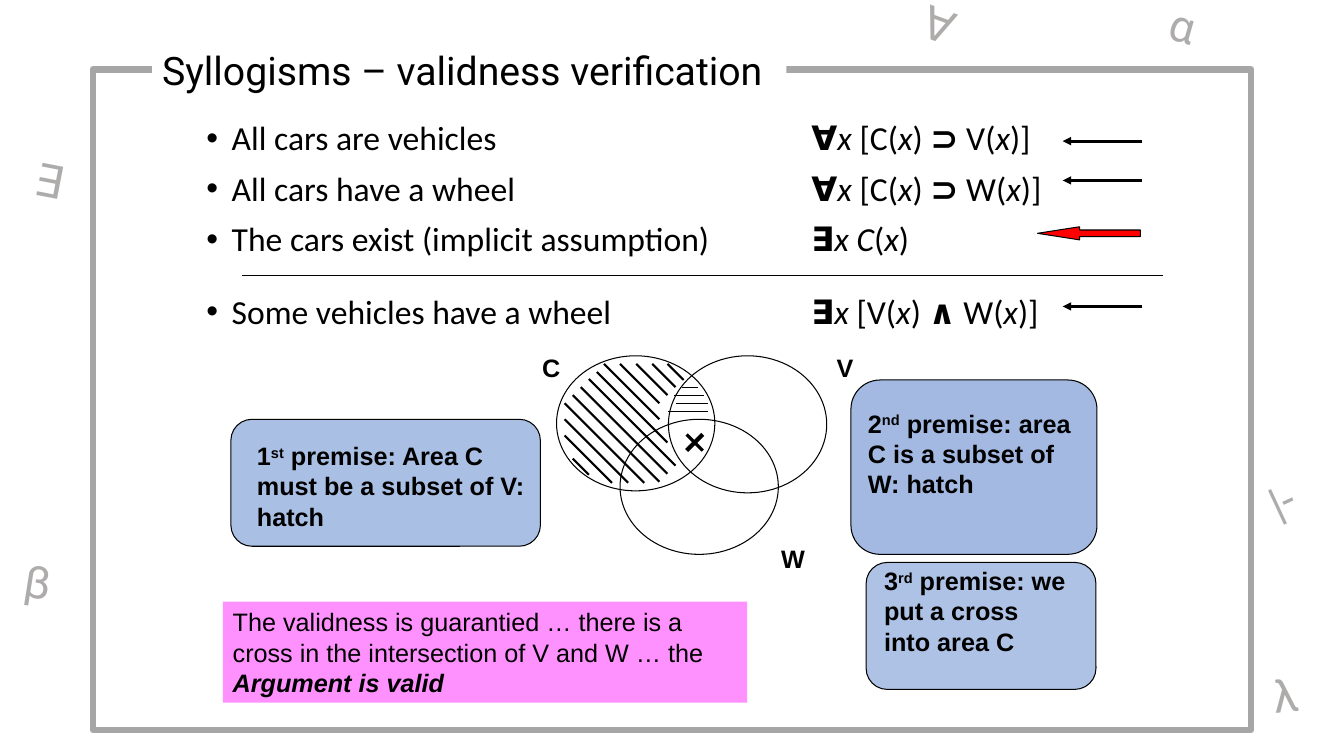
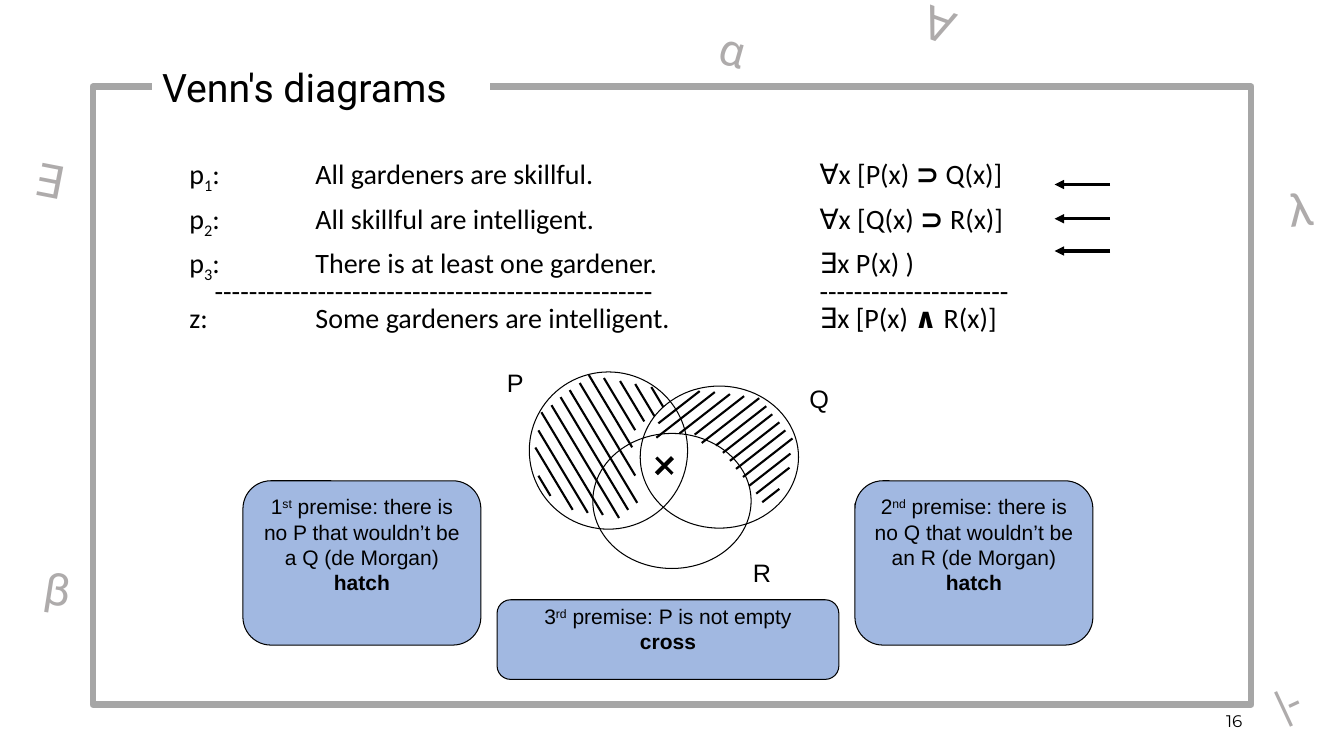
from lxml import etree
from pptx import Presentation
from pptx.dml.color import RGBColor
from pptx.enum.shapes import MSO_CONNECTOR as Connector, MSO_SHAPE as Shape
from pptx.enum.text import MSO_ANCHOR as Anchor, PP_ALIGN as Align
from pptx.oxml.ns import qn
from pptx.util import Inches, Pt

BLACK, WHITE, BLUE, PINK, RED = "000000", "FFFFFF", "4472C4", "FF00FF", "FF0000"
FRAME_GREY, SYMBOL_GREY = "A6A6A6", "AEABAB"
# Inline marks used in the texts: *bold*  _italic_  ^superscript^  ~subscript~
MARKS = "*_^~"

# Floating symbols: position, size, rotation (a slide may move some of them)
SYMBOLS = {
    "∀": (9.06, -0.06, 0.6, 20),
    "∃": (0.25, 1.48, 0.63, 11),
    "α": (11.51, -0.04, 0.63, 16),
    "β": (0.15, 5.46, 0.58, 9),
    "λ": (12.53, 6.57, 0.59, -6),
    "|-": (12.49, 4.59, 0.68, -25),
}

# Slide 1 content
SYLLOGISM = [
    ("All cars are vehicles", "*∀*_x_ [C(_x_) *⊃* V(_x_)]"),
    ("All cars have a wheel", "*∀*_x_ [C(_x_) *⊃* W(_x_)]"),
    ("The cars exist (implicit assumption)", "*∃*_x C_(_x_)"),
    ("Some vehicles have a wheel", "*∃*_x_ [V(_x_) *∧* W(_x_)]"),
]
SYLLOGISM_GAPS = [10, 10, 10, 26]
# Box, opacity, text, text area
PREMISES = [
    ((2.29, 4.16, 3.07, 1.26), 45,
     "*1^st^ premise: Area C must be a subset of V: hatch*", (2.45, 4.32, 2.99, 1)),
    ((8.44, 3.77, 2.44, 1.73), 49,
     "*2^nd^ premise: area C is a subset of W: hatch*", (8.51, 4, 2.28, 1)),
    ((8.59, 5.58, 2.28, 1.26), 43,
     "*3^rd^ premise: we put a cross into area C*", (8.67, 5.56, 2.05, 1)),
]
VERDICT = ("The validness is guarantied … there is a cross in the intersection "
           "of V and W … the\v*_Argument is valid_*")
CAR_SETS = [
    ("*C*", (5.28, 3.45), (5.52, 3.53, 1.57, 1.34)),
    ("*V*", (8.2, 3.45), (6.63, 3.53, 1.57, 1.36)),
    ("*W*", (7.65, 5.34), (6.15, 4.16, 1.57, 1.34)),
]
# Hatch strokes: start x, start y, horizontal run
CARS_OUTSIDE_V = [
    (6.62, 3.61, 0.16), (6.47, 3.61, 0.23), (6.31, 3.61, 0.31), (6.15, 3.61, 0.39),
    (5.99, 3.61, 0.55), (5.92, 3.69, 0.7), (5.84, 3.76, 0.86), (5.76, 3.84, 0.86),
    (5.68, 3.92, 0.86), (5.6, 4, 0.79), (5.6, 4.16, 0.63), (5.6, 4.32, 0.47),
    (5.68, 4.55, 0.16),
]
CARS_OUTSIDE_W = [(6.76, 3.84, 0.16), (6.68, 3.92, 0.3), (6.7, 4, 0.32), (6.63, 4.08, 0.39)]

# Slide 2 content
GARDENERS = [
    "p~1~:\tAll gardeners are skillful.\t∀x [P(x) *⊃* Q(x)]",
    "p~2~:\tAll skillful are intelligent.\t∀x [Q(x) *⊃* R(x)]",
    "p~3~:\tThere is at least one gardener.\t∃x P(x) )",
    "\t" + "-" * 51 + "\t" + "-" * 22,
    "z:\t\tSome gardeners are intelligent.\t∃x [P(x) *∧* R(x)]",
]
GARDENER_GAPS = [10, 10, 10, 0, 0]
GARDENER_TABS = [0.25, 1.25, 6.25]
# Box, callout tip and corner, text, top margin
CALLOUTS = [
    ((2.41, 4.77, 2.36, 1.63), (0.34, -0.5, 0.17),
     ["1^st^ premise: there is no P that wouldn’t be a Q (de Morgan)", "*hatch*"], 0.05),
    ((8.48, 4.77, 2.36, 1.63), (-0.5, -0.36, 0.17),
     ["2^nd^ premise: there is no Q that wouldn’t be an R (de Morgan)", "*hatch*"], 0.05),
    ((4.93, 5.95, 3.39, 0.79), (-0.5, -0.03, 0.17),
     ["3^rd^ premise: P is not empty", "*cross*"], 0),
]
GARDENER_SETS = [
    ("P", (4.93, 3.59), (5.25, 3.69, 1.57, 1.56)),
    ("Q", (7.93, 3.75), (6.35, 3.83, 1.57, 1.41)),
    ("R", (7.37, 5.48), (5.88, 4.3, 1.57, 1.34)),
]
P_OUTSIDE_Q = [
    (6.46, 3.84, 0.12), (6.3, 3.81, 0.19), (6.15, 3.78, 0.24), (5.99, 3.75, 0.31),
    (5.84, 3.72, 0.43), (5.75, 3.8, 0.55), (5.65, 3.87, 0.67), (5.56, 3.94, 0.67),
    (5.47, 4.02, 0.67), (5.37, 4.09, 0.61), (5.34, 4.27, 0.49), (5.31, 4.44, 0.37),
    (5.34, 4.72, 0.12),
]
Q_OUTSIDE_R = [
    (6.94, 3.88, -0.41), (7.09, 3.89, -0.58), (7.24, 3.91, -0.5), (7.38, 3.93, -0.49),
    (7.53, 3.95, -0.57), (7.6, 4.03, -0.5), (7.66, 4.11, -0.49), (7.73, 4.19, -0.49),
    (7.79, 4.27, -0.49), (7.86, 4.35, -0.49), (7.84, 4.5, -0.41), (7.83, 4.64, -0.33),
    (7.73, 4.85, -0.17),
]


def rgb(color):
    return RGBColor.from_string(color)


def inches(lengths):
    return [Inches(length) for length in lengths]


# Text
def add_runs(paragraph, marked, font, size, color):
    """Turn marked text into formatted runs."""
    active, pieces = set(), [("", frozenset())]
    for char in marked:
        if char in MARKS:
            active ^= {char}
            pieces.append(("", frozenset(active)))
        else:
            pieces[-1] = (pieces[-1][0] + char, pieces[-1][1])
    for words, marks in pieces:
        for number, line in enumerate(words.split("\v")):
            if number:
                paragraph.add_line_break()
            if not line:
                continue
            run = paragraph.add_run()
            run.text = line
            run.font.name, run.font.size = font, Pt(size)
            run.font.color.rgb = rgb(color)
            run.font.bold, run.font.italic = "*" in marks, "_" in marks
            if marks & {"^", "~"}:
                run.font._element.set("baseline", "30000" if "^" in marks else "-25000")


def write(shape, lines, size=18, font="Arial", color=BLACK, align=Align.LEFT,
          anchor=Anchor.TOP, spacing=None, gaps=None):
    frame = shape.text_frame
    frame.word_wrap, frame.vertical_anchor = True, anchor
    for number, line in enumerate(lines):
        paragraph = frame.paragraphs[0] if number == 0 else frame.add_paragraph()
        paragraph.alignment, paragraph.line_spacing = align, spacing
        if gaps:
            paragraph.space_before = Pt(gaps[number])
        add_runs(paragraph, line, font, size, color)
    return shape


def add_text(slide, box, lines, **style):
    return write(slide.shapes.add_textbox(*inches(box)), lines, **style)


def add_bullets(shape, indent=0.25):
    for paragraph in shape.text_frame.paragraphs:
        props = paragraph._p.get_or_add_pPr()
        props.set("marL", str(Inches(indent)))
        props.set("indent", str(-Inches(indent)))
        etree.SubElement(props, qn("a:buFont"), typeface="Arial")
        etree.SubElement(props, qn("a:buChar"), char="•")


def add_tabs(shape, stops):
    for paragraph in shape.text_frame.paragraphs:
        tabs = etree.SubElement(paragraph._p.get_or_add_pPr(), qn("a:tabLst"))
        for stop in stops:
            etree.SubElement(tabs, qn("a:tab"), pos=str(Inches(stop)), algn="l")


# Shapes and lines
def add_box(slide, kind, box, fill=None, opacity=100, line=BLACK, width=0.75):
    shape = slide.shapes.add_shape(kind, *inches(box))
    shape.shadow.inherit = False
    if fill:
        shape.fill.solid()
        shape.fill.fore_color.rgb = rgb(fill)
        if opacity < 100:
            tone = shape.fill._xPr.find(qn("a:solidFill"))[0]
            etree.SubElement(tone, qn("a:alpha"), val=str(opacity * 1000))
    else:
        shape.fill.background()
    if line:
        shape.line.color.rgb, shape.line.width = rgb(line), Pt(width)
    else:
        shape.line.fill.background()
    return shape


def add_line(slide, start, end, width=0.75, arrow=False):
    line = slide.shapes.add_connector(Connector.STRAIGHT, *inches(start + end))
    line.line.color.rgb, line.line.width = rgb(BLACK), Pt(width)
    if arrow:
        etree.SubElement(line.line._get_or_add_ln(), qn("a:tailEnd"), type="triangle")
    etree.SubElement(line._element.spPr, qn("a:effectLst"))


def add_arrows(slide, right, left, heights, width):
    for y in heights:
        add_line(slide, (right, y), (left, y), width, arrow=True)


# Venn diagram
def add_sets(slide, sets):
    for label, (x, y), circle in sets:
        add_box(slide, Shape.OVAL, circle)
        add_text(slide, (x, y, 0.47, 0.4), [label])


def add_hatch(slide, strokes, slope, width=1.5):
    for x, y, run in strokes:
        add_line(slide, (x, y), (x + run, y + run * slope), width)


def add_cross(slide, x, y, size=0.16):
    add_line(slide, (x, y), (x + size, y + size), 2.25)
    add_line(slide, (x + size, y), (x, y + size), 3)


# Frame, title and symbols shared by the slides
def add_framed_slide(deck, title, title_box, top, height, moved):
    slide = deck.slides.add_slide(deck.slide_layouts[6])
    add_box(slide, Shape.RECTANGLE, (0.92, top, 11.49, height), line=FRAME_GREY, width=4.5)
    patch = add_box(slide, Shape.RECTANGLE, title_box, WHITE, line=None)
    write(patch, [title], size=28, font="Roboto", anchor=Anchor.MIDDLE)
    for symbol, (x, y, width, turn) in SYMBOLS.items():
        x, y = moved.get(symbol, (x, y))
        text = add_text(slide, (x, y, width, 0.64), [symbol], size=32, font="Roboto",
                        color=SYMBOL_GREY)
        text.rotation = turn
    return slide


def build_syllogisms(deck):
    slide = add_framed_slide(deck, "Syllogisms – validness verification",
                             (1.51, 0.3, 6.29, 0.79), 0.69, 6.55, {})
    # Statements and formulas
    statements, formulas = zip(*SYLLOGISM)
    style = dict(size=24, font="Calibri", spacing=0.9, gaps=SYLLOGISM_GAPS)
    add_bullets(add_text(slide, (1.95, 1.16, 5.9, 2.44), statements, **style))
    add_text(slide, (7.95, 1.16, 3.6, 2.44), formulas, **style)
    add_line(slide, (2.4, 2.73), (11.53, 2.73))
    add_arrows(slide, 11.33, 10.54, [1.4, 1.79, 3.04], 2)
    implicit = add_box(slide, Shape.LEFT_ARROW, (10.29, 2.25, 1.02, 0.13), RED)
    implicit.adjustments[0], implicit.adjustments[1] = 0.5, 3.21
    # Diagram
    add_sets(slide, CAR_SETS)
    add_hatch(slide, CARS_OUTSIDE_V, 1)
    add_hatch(slide, CARS_OUTSIDE_W, 0, 0.75)
    add_cross(slide, 6.81, 4.31)
    # Premises and verdict
    for box, opacity, premise, area in PREMISES:
        add_box(slide, Shape.FLOWCHART_ALTERNATE_PROCESS, box, BLUE, opacity)
        add_text(slide, area, [premise])
    verdict = add_box(slide, Shape.RECTANGLE, (2.21, 5.97, 5.2, 1), PINK, 43, line=None)
    write(verdict, [VERDICT])


def build_venn(deck):
    slide = add_framed_slide(deck, "Venn's diagrams", (1.51, 0.56, 3.35, 0.61), 0.86, 6.13,
                             {"α": (7.05, 0.19), "β": (0.35, 5.53),
                              "λ": (12.68, 1.74), "|-": (12.55, 6.6)})
    # Argument
    argument = add_text(slide, (1.78, 1.54, 9.75, 1.98), GARDENERS, size=20,
                        font="Calibri", spacing=0.8, gaps=GARDENER_GAPS)
    add_tabs(argument, GARDENER_TABS)
    add_arrows(slide, 11.01, 10.46, [1.83, 2.17, 2.49], 2.25)
    # Diagram
    add_sets(slide, GARDENER_SETS)
    add_hatch(slide, P_OUTSIDE_Q, 1.67)
    add_hatch(slide, Q_OUTSIDE_R, -0.78)
    add_cross(slide, 6.51, 4.54)
    # Premises
    for box, shaping, lines, margin in CALLOUTS:
        callout = add_box(slide, Shape.ROUNDED_RECTANGULAR_CALLOUT, box, BLUE, 50)
        for number, value in enumerate(shaping):
            callout.adjustments[number] = value
        callout.text_frame.margin_top = Inches(margin)
        write(callout, lines, size=15, align=Align.CENTER)
    add_text(slide, (9.42, 6.95, 3, 0.4), ["16"], size=12, font="Montserrat",
             align=Align.RIGHT, anchor=Anchor.MIDDLE)


def main():
    deck = Presentation()
    deck.slide_width, deck.slide_height = inches((13.33, 7.5))
    build_syllogisms(deck)
    build_venn(deck)
    deck.save("out.pptx")


if __name__ == "__main__":
    main()
